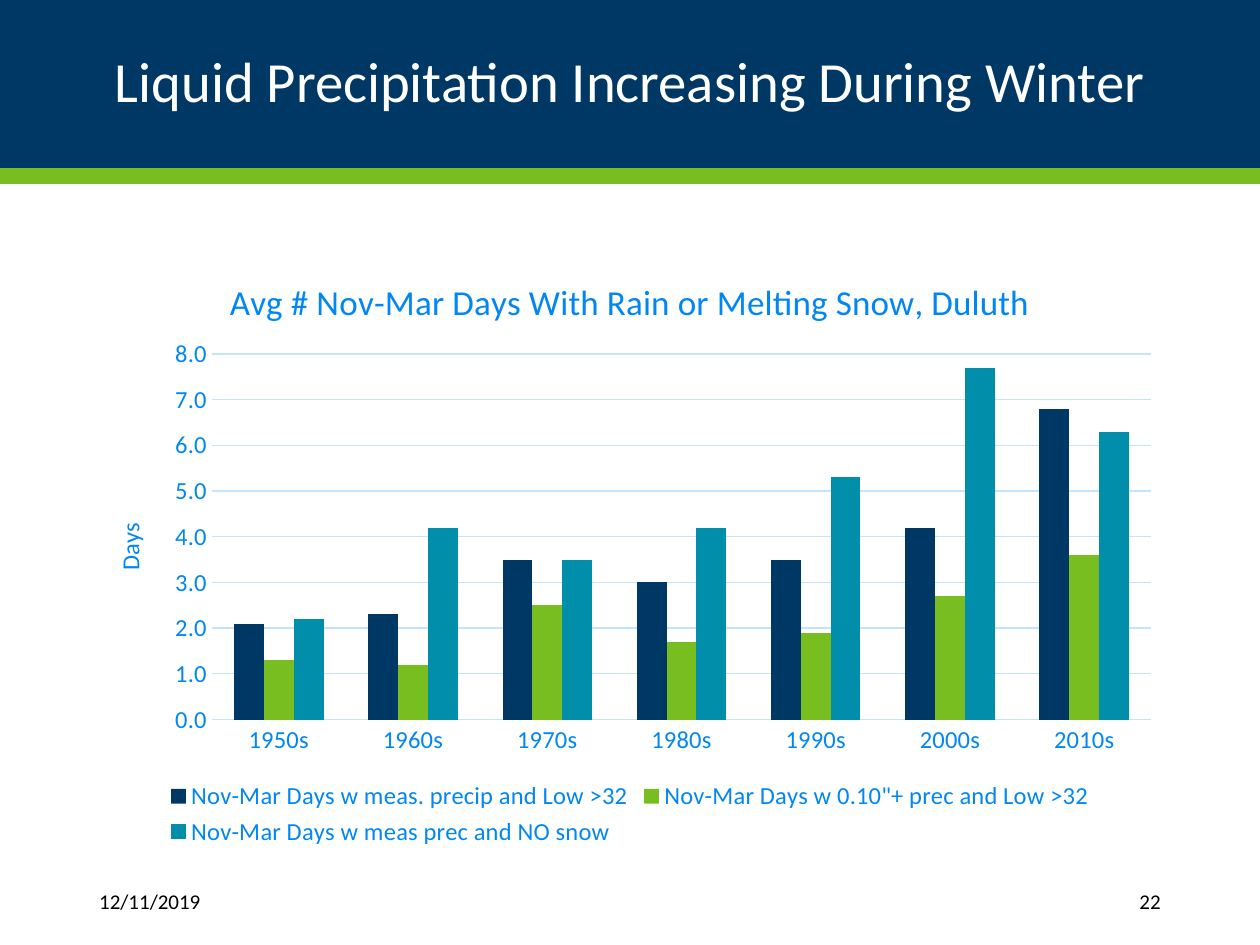
from lxml.etree import SubElement
from pptx import Presentation
from pptx.chart.data import CategoryChartData
from pptx.dml.color import RGBColor
from pptx.enum.chart import XL_CHART_TYPE, XL_LEGEND_POSITION, XL_TICK_MARK
from pptx.enum.shapes import MSO_SHAPE
from pptx.enum.text import MSO_ANCHOR, MSO_AUTO_SIZE, PP_ALIGN
from pptx.oxml.ns import qn
from pptx.util import Cm, Pt

NAVY, GREEN, TEAL, BLUE, PALE = "003865", "78BE21", "008EAA", "0087F4", "C2E4FF"


def rgb(value):
    return RGBColor.from_string(value)


def put_text(tf, text, size=12, color="000000", align=PP_ALIGN.LEFT, spacing=None):
    tf.word_wrap = True
    tf.auto_size = MSO_AUTO_SIZE.NONE
    tf.vertical_anchor = MSO_ANCHOR.MIDDLE
    p = tf.paragraphs[0]
    p.alignment = align
    p.line_spacing = spacing
    r = p.add_run()
    r.text = text
    r.font.name = "Calibri"
    r.font.size = Pt(size)
    r.font.bold = False
    r.font.color.rgb = rgb(color)


prs = Presentation()
prs.slide_width, prs.slide_height = Cm(25.4), Cm(19.05)
s = prs.slides.add_slide(prs.slide_layouts[5])

for top, height, color in [(0, 3.39, NAVY), (3.39, 0.32, GREEN)]:
    sp = s.shapes.add_shape(MSO_SHAPE.RECTANGLE, 0, Cm(top), prs.slide_width, Cm(height))
    sp.shadow.inherit = False
    sp.fill.solid()
    sp.fill.fore_color.rgb = rgb(color)
    sp.line.fill.background()

title = s.shapes.title
s.shapes._spTree.append(title._element)
title.left, title.top, title.width, title.height = Cm(1.75), Cm(0.43), Cm(21.9), Cm(2.54)
put_text(title.text_frame, "Liquid Precipitation Increasing During Winter",
         size=32.4, color="FFFFFF", align=PP_ALIGN.CENTER, spacing=0.9)

for left, width, text, align in [(1.75, 2.82, "12/11/2019", PP_ALIGN.LEFT),
                                 (20.6, 3.05, "22", PP_ALIGN.RIGHT)]:
    sp = s.shapes.add_textbox(Cm(left), Cm(17.65), Cm(width), Cm(1.02))
    put_text(sp.text_frame, text, align=align)

series = [
    ("Nov-Mar Days w meas. precip and Low >32", NAVY, (2.1, 2.3, 3.5, 3, 3.5, 4.2, 6.8)),
    ('Nov-Mar Days w 0.10"+ prec and Low >32', GREEN, (1.3, 1.2, 2.5, 1.7, 1.9, 2.7, 3.6)),
    ("Nov-Mar Days w meas prec and NO snow", TEAL, (2.2, 4.2, 3.5, 4.2, 5.3, 7.7, 6.3)),
]
data = CategoryChartData(number_format="0.0")
data.categories = [f"{year}s" for year in range(1950, 2020, 10)]
for name, color, values in series:
    data.add_series(name, values)
chart = s.shapes.add_chart(XL_CHART_TYPE.COLUMN_CLUSTERED, Cm(1.75), Cm(5.08),
                           Cm(21.9), Cm(12.09), data).chart
chart.font.name = "Calibri"
chart.font.size = Pt(14)
chart.font.color.rgb = rgb(BLUE)

plot = chart.plots[0]
plot.gap_width = 150
plot.overlap = 0
plot.vary_by_categories = False
for bars, (name, color, values) in zip(plot.series, series):
    bars.format.fill.solid()
    bars.format.fill.fore_color.rgb = rgb(color)
    bars.invert_if_negative = False

cat_axis, val_axis = chart.category_axis, chart.value_axis
for axis in (cat_axis, val_axis):
    axis.major_tick_mark = axis.minor_tick_mark = XL_TICK_MARK.NONE
val_axis.minimum_scale, val_axis.maximum_scale, val_axis.major_unit = 0, 8, 1
val_axis.tick_labels.number_format = "0.0"
val_axis.tick_labels.number_format_is_linked = False
val_axis.format.line.fill.background()
for line in (cat_axis.format.line, val_axis.major_gridlines.format.line):
    line.color.rgb = rgb(PALE)
    line.width = Pt(0.75)

for owner, text, size in [(chart, "Avg # Nov-Mar Days With Rain or Melting Snow, Duluth", 20),
                          (val_axis, "Days", 14)]:
    owner.has_title = True
    p = owner.chart_title.text_frame.paragraphs[0] if owner is chart \
        else owner.axis_title.text_frame.paragraphs[0]
    r = p.add_run()
    r.text = text
    r.font.name = "Calibri"
    r.font.size = Pt(size)
    r.font.bold = False
    r.font.color.rgb = rgb(BLUE)
chart.chart_title.include_in_layout = False

chart.has_legend = True
chart.legend.position = XL_LEGEND_POSITION.BOTTOM
chart.legend.include_in_layout = False

area = chart._chartSpace.chart.plotArea
layout = area.find(qn("c:layout"))
if layout is None:
    layout = SubElement(area, qn("c:layout"))
    area.insert(0, layout)
manual = SubElement(layout, qn("c:manualLayout"))
for tag, value in [("layoutTarget", "inner"), ("xMode", "edge"), ("yMode", "edge"),
                   ("x", "0.115"), ("y", "0.17"), ("w", "0.865"), ("h", "0.61")]:
    SubElement(manual, qn(f"c:{tag}")).set("val", value)

prs.save("out.pptx")
